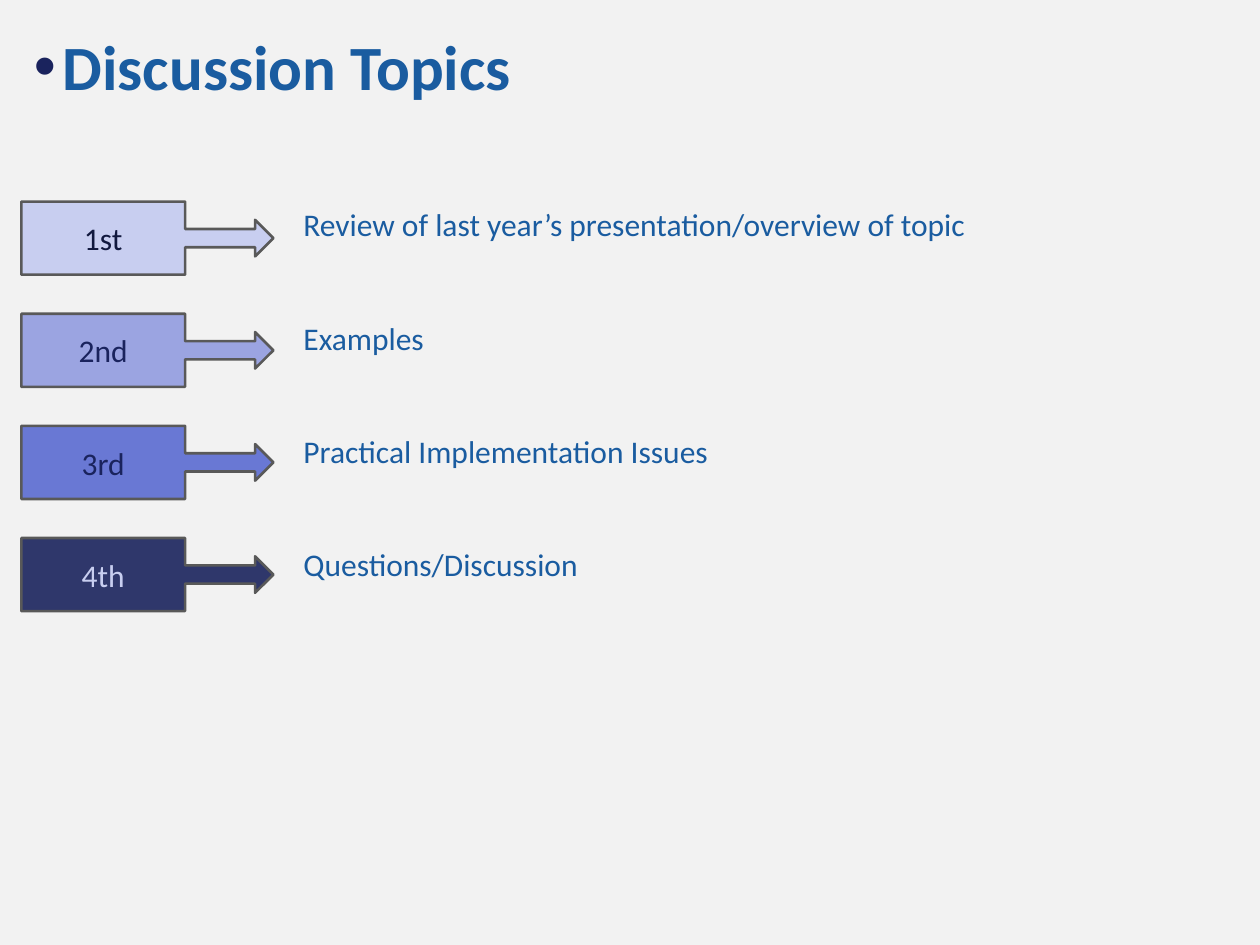
from lxml import etree
from pptx import Presentation
from pptx.dml.color import RGBColor
from pptx.enum import shapes, text
from pptx.oxml.ns import qn
from pptx.util import Inches, Pt

TITLE = "Discussion Topics"
TOPICS = [
    ("1st", "Review of last year’s presentation/overview of topic", "C8CEF0", 100, "11183E"),
    ("2nd", "Examples", "929CE0", 90, "1A235D"),
    ("3rd", "Practical Implementation Issues", "5B6BD1", 90, "1A235D"),
    ("4th", "Questions/Discussion", "1A235D", 90, "C8CEF0"),
]
THEME = {
    "font": "Calibri",
    "background": "F2F2F2",
    "heading": "1A5CA0",
    "bullet": "1A235D",
    "outline": "595959",
    "title_size": 36,
    "body_size": 18,
}
LEFT = 0.17
CALLOUT_TOP, CALLOUT_PITCH = 1.6, 0.89
TOPIC_TOP, TOPIC_PITCH = 1.58, 0.9


def write(shape, wording, size, color, anchor, bold=False, align=text.PP_ALIGN.LEFT):
    frame = shape.text_frame
    frame.word_wrap = True
    frame.vertical_anchor = anchor
    paragraph = frame.paragraphs[0]
    paragraph.text = wording
    paragraph.alignment = align
    return paragraph, size, color, bold


def style(paragraph, size, color, bold):
    font = paragraph.font
    font.name = THEME["font"]
    font.size = Pt(size)
    font.bold = bold
    font.color.rgb = RGBColor.from_string(color)


def indent(paragraph, margin, first_line=0):
    properties = paragraph._p.get_or_add_pPr()
    properties.set("marL", str(Inches(margin)))
    properties.set("indent", str(Inches(first_line)))
    return properties


def add_title(slide):
    box = slide.shapes.add_textbox(Inches(LEFT), Inches(0.17), Inches(9), Inches(0.7))
    paragraph, *look = write(box, TITLE, THEME["title_size"], THEME["heading"],
                             text.MSO_ANCHOR.MIDDLE, bold=True)
    properties = indent(paragraph, 0.23, -0.23)
    color = etree.SubElement(properties, qn("a:buClr"))
    etree.SubElement(color, qn("a:srgbClr"), val=THEME["bullet"])
    etree.SubElement(properties, qn("a:buFont"), typeface="Arial")
    etree.SubElement(properties, qn("a:buChar"), char="•")
    style(paragraph, *look)


def add_callout(slide, row, label, fill, opacity, color):
    callout = slide.shapes.add_shape(
        shapes.MSO_SHAPE.RIGHT_ARROW_CALLOUT, Inches(LEFT),
        Inches(CALLOUT_TOP + row * CALLOUT_PITCH), Inches(2), Inches(0.58))
    callout.shadow.inherit = False
    callout.fill.solid()
    callout.fill.fore_color.rgb = RGBColor.from_string(fill)
    if opacity < 100:
        fill_color = callout._element.spPr.find(qn("a:solidFill")).find(qn("a:srgbClr"))
        etree.SubElement(fill_color, qn("a:alpha"), val=str(opacity * 1000))
    callout.line.color.rgb = RGBColor.from_string(THEME["outline"])
    callout.line.width = Pt(1.5)
    style(*write(callout, label, THEME["body_size"], color,
                 text.MSO_ANCHOR.MIDDLE, align=text.PP_ALIGN.CENTER))


def add_topic(slide, row, topic):
    box = slide.shapes.add_textbox(
        Inches(2.25), Inches(TOPIC_TOP + row * TOPIC_PITCH), Inches(7.25), Inches(0.92))
    paragraph, *look = write(box, topic, THEME["body_size"], THEME["heading"],
                             text.MSO_ANCHOR.TOP)
    indent(paragraph, 0.06)
    style(paragraph, *look)


def main():
    presentation = Presentation()
    presentation.slide_width = Inches(10)
    presentation.slide_height = Inches(7.5)
    slide = presentation.slides.add_slide(presentation.slide_layouts[6])
    slide.background.fill.solid()
    slide.background.fill.fore_color.rgb = RGBColor.from_string(THEME["background"])
    add_title(slide)
    for row, (label, topic, fill, opacity, color) in enumerate(TOPICS):
        add_callout(slide, row, label, fill, opacity, color)
        add_topic(slide, row, topic)
    presentation.save("out.pptx")


if __name__ == "__main__":
    main()
